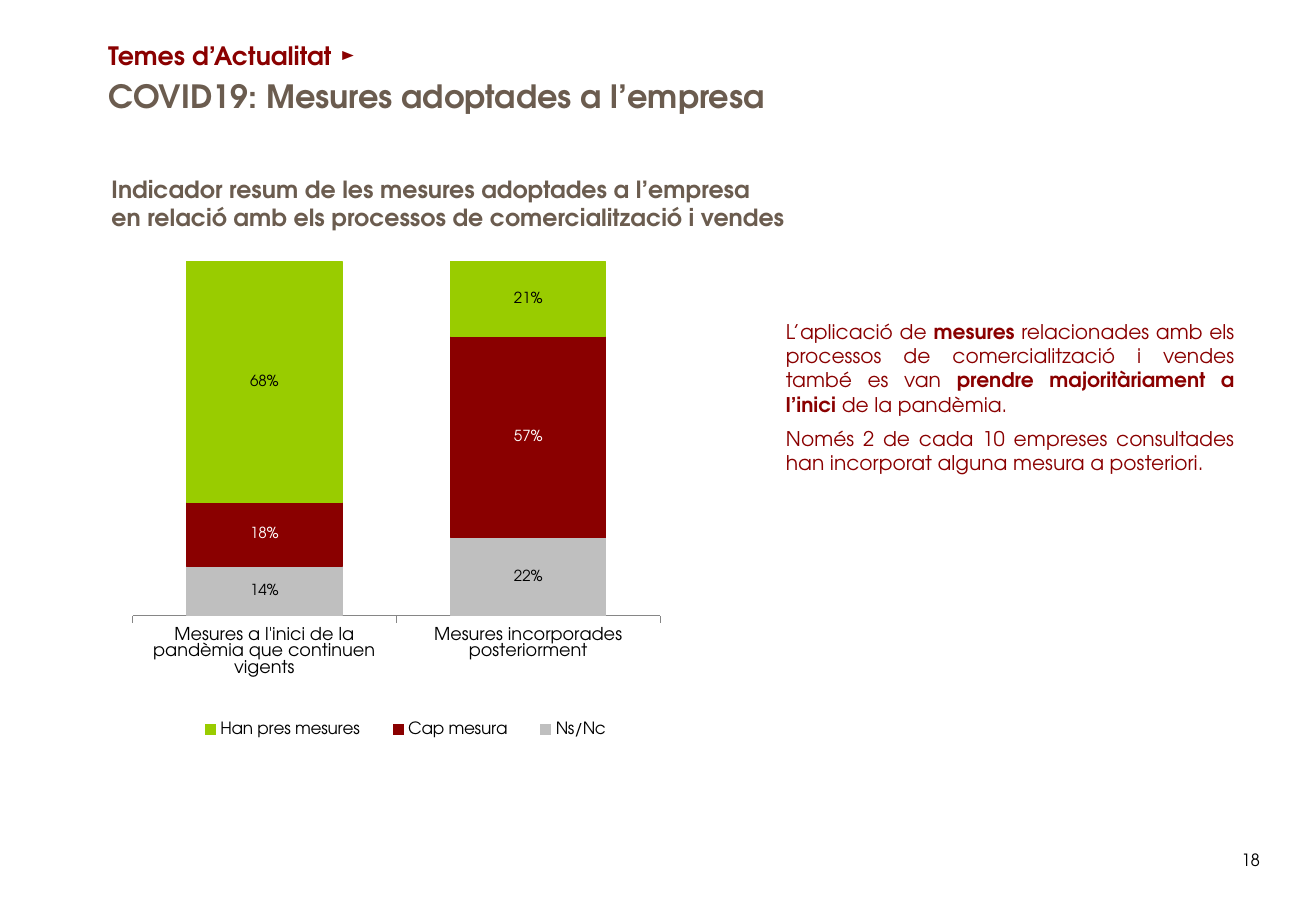
from dataclasses import dataclass

from lxml.etree import SubElement
from pptx import Presentation
from pptx.chart.data import CategoryChartData
from pptx.dml.color import RGBColor
from pptx.enum.chart import XL_CHART_TYPE as ChartType, XL_LEGEND_POSITION as LegendPosition
from pptx.enum.chart import XL_TICK_LABEL_POSITION as TickLabel, XL_TICK_MARK as TickMark
from pptx.enum.text import MSO_ANCHOR as Anchor, MSO_AUTO_SIZE as AutoSize, PP_ALIGN as Align
from pptx.oxml.ns import qn
from pptx.util import Cm, Pt


@dataclass(frozen=True)
class Theme:
    font: str = "TeX Gyre Adventor"
    red: str = "8A0000"
    brown: str = "6B5C4F"
    green: str = "99CC00"
    grey: str = "BFBFBF"
    axis: str = "868686"
    black: str = "000000"
    white: str = "FFFFFF"
    title: float = 19
    section: float = 15
    heading: float = 14
    body: float = 12
    category: float = 10.5
    small: float = 10
    label: float = 9


THEME = Theme()
PAGE_SIZE = (27.51, 19.05)

TITLE = [[("COVID19: Mesures adoptades a l’empresa", True)]]
SECTION = [[("Temes d’Actualitat ►", True)]]
HEADING = [[("Indicador resum de les mesures adoptades a l’empresa\v"
             "en relació amb els processos de comercialització i vendes", True)]]
COMMENTS = [
    [("L’aplicació de ", False), ("mesures", True),
     (" relacionades amb els processos de comercialització i vendes també es van ", False),
     ("prendre majoritàriament a l’inici ", True), ("de la pandèmia.", False)],
    [("Només 2 de cada 10 empreses consultades han incorporat alguna mesura a posteriori.", False)],
]
PAGE_NUMBER = [[("18", False)]]

CATEGORIES = ["Mesures a l'inici de la pandèmia que continuen vigents",
              "Mesures incorporades posteriorment"]
SERIES = [
    ("Ns/Nc", (0.14, 0.22), THEME.grey, THEME.black),
    ("Cap mesura", (0.18, 0.57), THEME.red, THEME.white),
    ("Han pres mesures", (0.68, 0.21), THEME.green, THEME.black),
]

TITLE_AREA = (2.01, 1.6, 24.92, 0.79)
SECTION_AREA = (2.01, 0.71, 24.28, 0.91)
HEADING_AREA = (2.08, 3.53, 14.9, 1.45)
COMMENTS_AREA = (16.18, 6.55, 9.88, 3.56)
NUMBER_AREA = (25.7, 17.65, 1.7, 1.02)
CHART_AREA = (2.08, 5.31, 12.55, 10.41)
PLOT_LAYOUT = {"x": 0.055, "y": 0.016, "w": 0.879, "h": 0.711}
LEGEND_LAYOUT = {"x": 0.13, "y": 0.92, "w": 0.76, "h": 0.07}


def style_font(font, size, color, bold=False):
    font.name = THEME.font
    font.size = Pt(size)
    font.bold = bold
    font.color.rgb = RGBColor.from_string(color)


def fill_text(box, paragraphs, size, color, anchor=Anchor.TOP, align=Align.LEFT):
    frame = box.text_frame
    frame.word_wrap = True
    frame.auto_size = AutoSize.NONE
    frame.vertical_anchor = anchor
    for index, spans in enumerate(paragraphs):
        para = frame.add_paragraph() if index else frame.paragraphs[0]
        para.alignment = align
        para.space_before = Pt(6 if index else 0)
        for text, bold in spans:
            for number, line in enumerate(text.split("\v")):
                if number:
                    para.add_line_break()
                span = para.add_run()
                span.text = line
                style_font(span.font, size, color, bold)


def add_text(page, area, *content, **options):
    box = page.shapes.add_textbox(*map(Cm, area))
    fill_text(box, *content, **options)


def set_layout(parent, position, fractions, inner=False):
    for old in parent.findall(qn("c:layout")):
        parent.remove(old)
    layout = SubElement(parent, qn("c:layout"))
    parent.insert(position, layout)
    manual = SubElement(layout, qn("c:manualLayout"))
    if inner:
        SubElement(manual, qn("c:layoutTarget"), val="inner")
    for side in "xy":
        SubElement(manual, qn(f"c:{side}Mode"), val="edge")
    for side, fraction in fractions.items():
        SubElement(manual, qn(f"c:{side}"), val=str(fraction))


def add_measures_chart(page):
    data = CategoryChartData(number_format="0%")
    data.categories = CATEGORIES
    for name, values, *_ in SERIES:
        data.add_series(name, values)
    chart = page.shapes.add_chart(
        ChartType.COLUMN_STACKED_100, *map(Cm, CHART_AREA), data).chart
    chart.has_title = False
    style_font(chart.font, THEME.small, THEME.black)

    plot = chart.plots[0]
    plot.gap_width, plot.overlap = 70, 100
    plot.vary_by_categories = False
    for series, (_, _, color, label_color) in zip(plot.series, SERIES):
        series.format.fill.solid()
        series.format.fill.fore_color.rgb = RGBColor.from_string(color)
        series.format.line.color.rgb = RGBColor.from_string(color)
        series.format.line.width = Pt(0.75)
        labels = series.data_labels
        labels.show_value = True
        labels.number_format, labels.number_format_is_linked = "0%", False
        style_font(labels.font, THEME.label, label_color)

    values = chart.value_axis
    values.minimum_scale, values.maximum_scale = 0, 1
    values.has_major_gridlines = False
    values.visible = False
    categories = chart.category_axis
    categories.major_tick_mark = TickMark.OUTSIDE
    categories.tick_label_position = TickLabel.LOW
    categories.format.line.color.rgb = RGBColor.from_string(THEME.axis)
    style_font(categories.tick_labels.font, THEME.category, THEME.black)

    chart.has_legend = True
    legend = chart.legend
    legend.position = LegendPosition.RIGHT
    legend.include_in_layout = False
    style_font(legend.font, THEME.small, THEME.black)
    legend_root = legend._element
    set_layout(legend_root, len(legend_root.findall(qn("c:legendPos"))), LEGEND_LAYOUT)
    set_layout(chart._chartSpace.chart.plotArea, 0, PLOT_LAYOUT, inner=True)


def main():
    """Build the slide on the measures adopted by companies."""
    deck = Presentation()
    deck.slide_width, deck.slide_height = map(Cm, PAGE_SIZE)
    page = deck.slides.add_slide(deck.slide_layouts[5])
    title = page.shapes.title
    title.left, title.top, title.width, title.height = map(Cm, TITLE_AREA)
    fill_text(title, TITLE, THEME.title, THEME.brown, anchor=Anchor.MIDDLE)
    add_text(page, SECTION_AREA, SECTION, THEME.section, THEME.red, anchor=Anchor.MIDDLE)
    add_text(page, HEADING_AREA, HEADING, THEME.heading, THEME.brown)
    add_measures_chart(page)
    add_text(page, COMMENTS_AREA, COMMENTS, THEME.body, THEME.red, align=Align.JUSTIFY)
    add_text(page, NUMBER_AREA, PAGE_NUMBER, THEME.small, THEME.black)
    deck.save("out.pptx")


if __name__ == "__main__":
    main()
